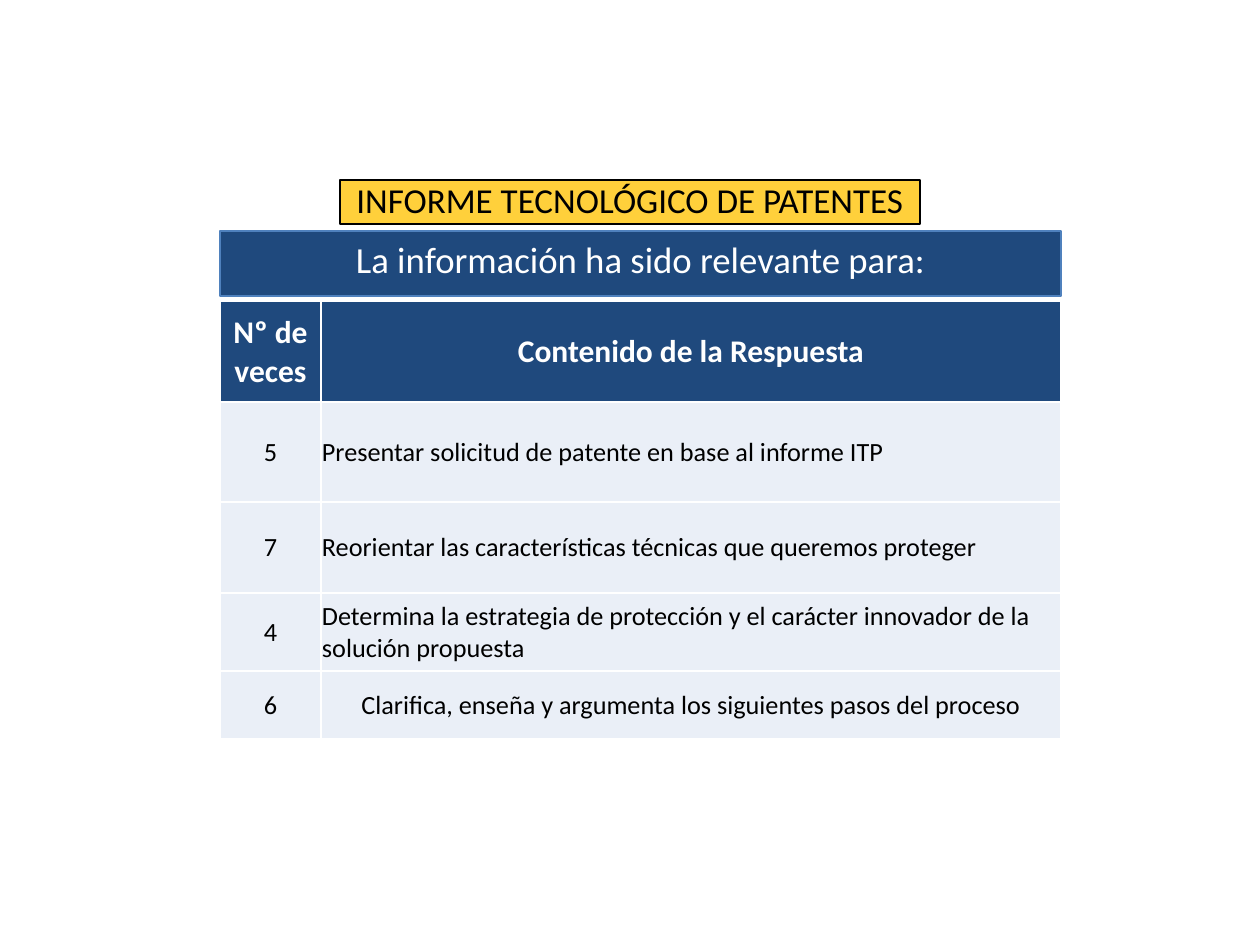
from lxml import etree
from pptx import Presentation
from pptx.dml import color
from pptx.enum import shapes, text
from pptx.oxml import ns
from pptx.util import Pt

PX = 914400 // 126
FONT = "Calibri"
NAVY, WHITE, BLACK, PALE = "1F497D", "FFFFFF", "000000", "EAEFF7"
CENTER, LEFT = text.PP_ALIGN.CENTER, text.PP_ALIGN.LEFT
MIDDLE, TOP = text.MSO_ANCHOR.MIDDLE, text.MSO_ANCHOR.TOP

BANNERS = [
    ("INFORME TECNOLÓGICO DE PATENTES", (340, 180, 580, 44),
     "FFD03B", BLACK, BLACK, 20, MIDDLE, 0.9),
    ("La información ha sido relevante para:", (220, 231, 841, 65),
     NAVY, "4F81BD", WHITE, 21, TOP, 1.0),
]
ANSWERS = [
    ("Nº de veces", "Contenido de la Respuesta", 101, CENTER),
    ("5", "Presentar solicitud de patente en base al informe ITP", 100, LEFT),
    ("7", "Reorientar las características técnicas que queremos proteger", 91, LEFT),
    ("4", "Determina la estrategia de protección y el carácter innovador "
          "de la solución propuesta", 78, LEFT),
    ("6", "Clarifica, enseña y argumenta los siguientes pasos del proceso", 68, CENTER),
]
COLUMNS = [101, 740]
TABLE_LEFT, TABLE_TOP = 220, 301
CELL_FORMAT = {
    "margin_left": PX, "margin_right": PX, "margin_top": PX, "margin_bottom": 0,
    "vertical_anchor": MIDDLE,
}


def rgb(value):
    return color.RGBColor.from_string(value)


def paint(fill, value):
    fill.solid()
    fill.fore_color.rgb = rgb(value)


def write(frame, words, size, ink, align, bold=False):
    paragraph = frame.paragraphs[0]
    paragraph.alignment = align
    run = paragraph.add_run()
    run.text = words
    for key, value in {"name": FONT, "size": Pt(size), "bold": bold}.items():
        setattr(run.font, key, value)
    run.font.color.rgb = rgb(ink)
    return paragraph


def add_borders(cell, value):
    properties = cell._tc.get_or_add_tcPr()
    for index, side in enumerate(("a:lnL", "a:lnR", "a:lnT", "a:lnB")):
        border = etree.Element(ns.qn(side), w=str(Pt(1)))
        solid = etree.SubElement(border, ns.qn("a:solidFill"))
        etree.SubElement(solid, ns.qn("a:srgbClr"), val=value)
        properties.insert(index, border)


def add_banner(slide, words, box, fill, line, ink, size, anchor, spacing):
    banner = slide.shapes.add_shape(
        shapes.MSO_SHAPE.RECTANGLE, *(length * PX for length in box))
    banner.shadow.inherit = False
    paint(banner.fill, fill)
    banner.line.color.rgb = rgb(line)
    banner.line.width = Pt(0.75)
    banner.text_frame.word_wrap = True
    banner.text_frame.vertical_anchor = anchor
    write(banner.text_frame, words, size, ink, CENTER).line_spacing = spacing


def add_answers(slide):
    heights = [answer[2] for answer in ANSWERS]
    answers = slide.shapes.add_table(
        len(ANSWERS), len(COLUMNS), TABLE_LEFT * PX, TABLE_TOP * PX,
        sum(COLUMNS) * PX, sum(heights) * PX).table
    answers.horz_banding = False
    for column, width in zip(answers.columns, COLUMNS):
        column.width = width * PX
    for index, (count, answer, height, align) in enumerate(ANSWERS):
        answers.rows[index].height = height * PX
        header = index == 0
        fill, ink, size = (NAVY, WHITE, 18) if header else (PALE, BLACK, 15)
        for column, (words, side) in enumerate(((count, CENTER), (answer, align))):
            cell = answers.cell(index, column)
            for key, value in CELL_FORMAT.items():
                setattr(cell, key, value)
            paint(cell.fill, fill)
            add_borders(cell, WHITE)
            write(cell.text_frame, words, size, ink, side, header)


def main():
    deck = Presentation()
    deck.slide_width, deck.slide_height = 1260 * PX, 945 * PX
    slide = deck.slides.add_slide(deck.slide_layouts[6])
    for banner in BANNERS:
        add_banner(slide, *banner)
    add_answers(slide)
    deck.save("out.pptx")


if __name__ == "__main__":
    main()
